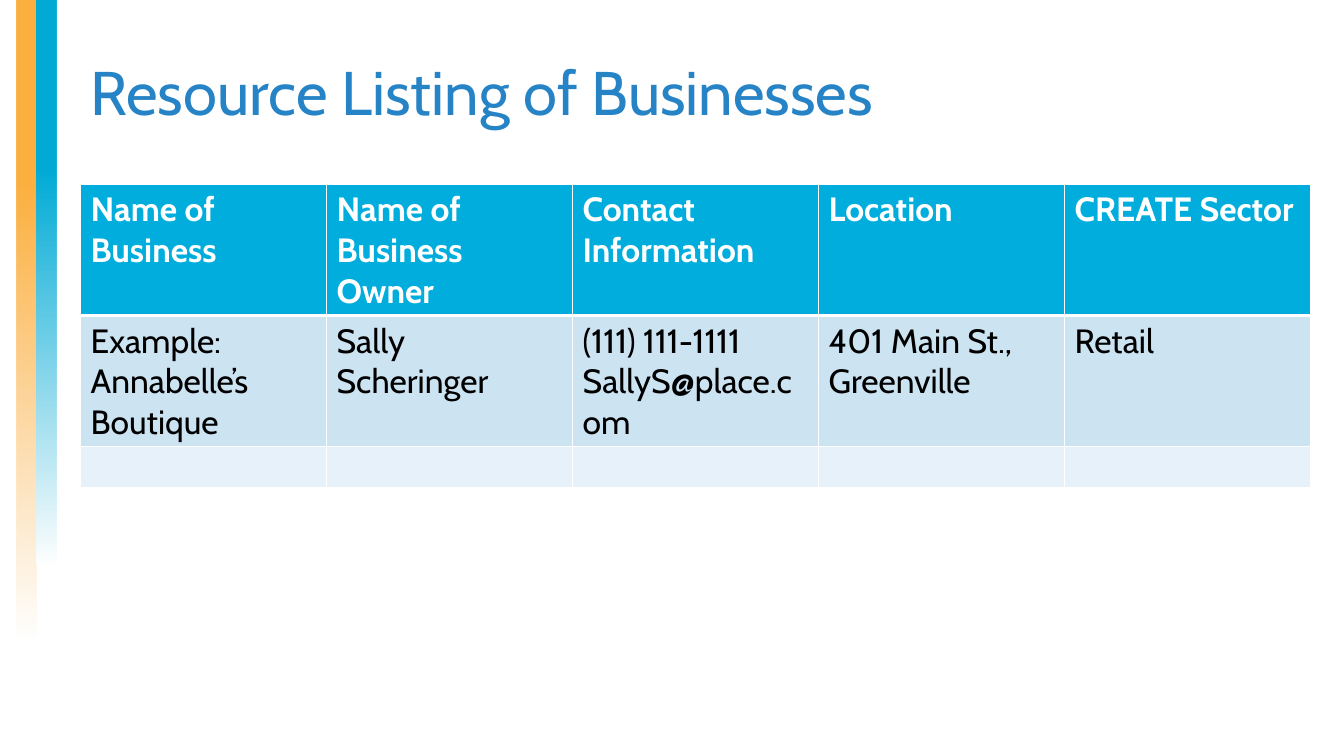
from dataclasses import dataclass

from lxml import etree
from pptx import Presentation
from pptx.dml.color import RGBColor
from pptx.enum import shapes, text
from pptx.oxml import ns
from pptx.util import Cm, Pt


@dataclass(frozen=True)
class Theme:
    font: str = "Cabin"
    title_size: int = 44
    table_size: int = 24
    title: str = "2683C6"
    white: str = "FFFFFF"
    orange: str = "FCB040"
    blue: str = "00ABD6"


@dataclass(frozen=True)
class Bar:
    left: float
    length: float
    color: str
    start: float


@dataclass(frozen=True)
class Row:
    cells: tuple[str, ...]
    fill: str
    color: str = "000000"
    bold: bool = False
    top: float = 1
    bottom: float = 1


THEME = Theme()
LEFT, WIDTH = 2.03, 31.0
BAR_WIDTH = 0.51
ROW_HEIGHT = 1.04

BARS = (
    Bar(0.42, 16.08, THEME.orange, 0.29),
    Bar(0.92, 14.22, THEME.blue, 0.3),
)
ROWS = (
    Row(("Name of Business", "Name of Business Owner", "Contact Information",
         "Location", "CREATE Sector"),
        "00ADDC", THEME.white, bold=True, bottom=3),
    Row(("Example: Annabelle’s Boutique", "Sally Scheringer",
         "(111) 111-1111\nSallyS@place.com", "401 Main St., Greenville", "Retail"),
        "CCE3F2", top=3),
    Row(("",) * 5, "E7F1F9"),
)


def rgb(value: str) -> RGBColor:
    return RGBColor.from_string(value)


def style(p, size: float, color: str, bold: bool = False) -> None:
    p.font.name = THEME.font
    p.font.size = Pt(size)
    p.font.bold = bold
    p.font.color.rgb = rgb(color)


def add_bar(s, bar: Bar) -> None:
    shift = (bar.length - BAR_WIDTH) / 2
    sp = s.shapes.add_shape(shapes.MSO_SHAPE.RECTANGLE, Cm(bar.left - shift),
                            Cm(shift), Cm(bar.length), Cm(BAR_WIDTH))
    sp.rotation = 90
    sp.shadow.inherit = False
    sp.line.fill.background()
    sp.fill.gradient()
    sp.fill.gradient_angle = 0
    first, last = sp.fill.gradient_stops
    first.position, first.color.rgb = bar.start, rgb(bar.color)
    last.position, last.color.rgb = 1, rgb(THEME.white)
    for color in sp.element.spPr.findall(".//" + ns.qn("a:srgbClr"))[-1:]:
        etree.SubElement(color, ns.qn("a:alpha"), val="96000")


def add_title(s, title: str) -> None:
    sp = s.shapes.add_textbox(Cm(LEFT), Cm(0.58), Cm(WIDTH), Cm(3.68))
    tf = sp.text_frame
    tf.word_wrap = True
    tf.vertical_anchor = text.MSO_ANCHOR.MIDDLE
    p = tf.paragraphs[0]
    p.text = title
    p.line_spacing = 0.9
    style(p, THEME.title_size, THEME.title)


def add_borders(cell, row: Row) -> None:
    tc_pr = cell._tc.get_or_add_tcPr()
    for side, width in (("L", 1), ("R", 1), ("T", row.top), ("B", row.bottom)):
        ln = etree.SubElement(tc_pr, ns.qn(f"a:ln{side}"), w=str(Pt(width)))
        fill = etree.SubElement(ln, ns.qn("a:solidFill"))
        etree.SubElement(fill, ns.qn("a:srgbClr"), val=THEME.white)


def add_listing(s, rows: tuple[Row, ...]) -> None:
    count = len(rows[0].cells)
    table = s.shapes.add_table(len(rows), count, Cm(LEFT), Cm(4.65), Cm(WIDTH),
                               Cm(ROW_HEIGHT * len(rows))).table
    table.horz_banding = False
    for i, row in enumerate(rows):
        for j, value in enumerate(row.cells):
            cell = table.cell(i, j)
            add_borders(cell, row)
            cell.fill.solid()
            cell.fill.fore_color.rgb = rgb(row.fill)
            if value:
                cell.text = value
                for p in cell.text_frame.paragraphs:
                    style(p, THEME.table_size, row.color, row.bold)


def main() -> None:
    prs = Presentation()
    prs.slide_width, prs.slide_height = Cm(33.87), Cm(19.05)
    s = prs.slides.add_slide(prs.slide_layouts[6])
    for bar in BARS:
        add_bar(s, bar)
    add_title(s, "Resource Listing of Businesses")
    add_listing(s, ROWS)
    prs.save("out.pptx")


if __name__ == "__main__":
    main()
